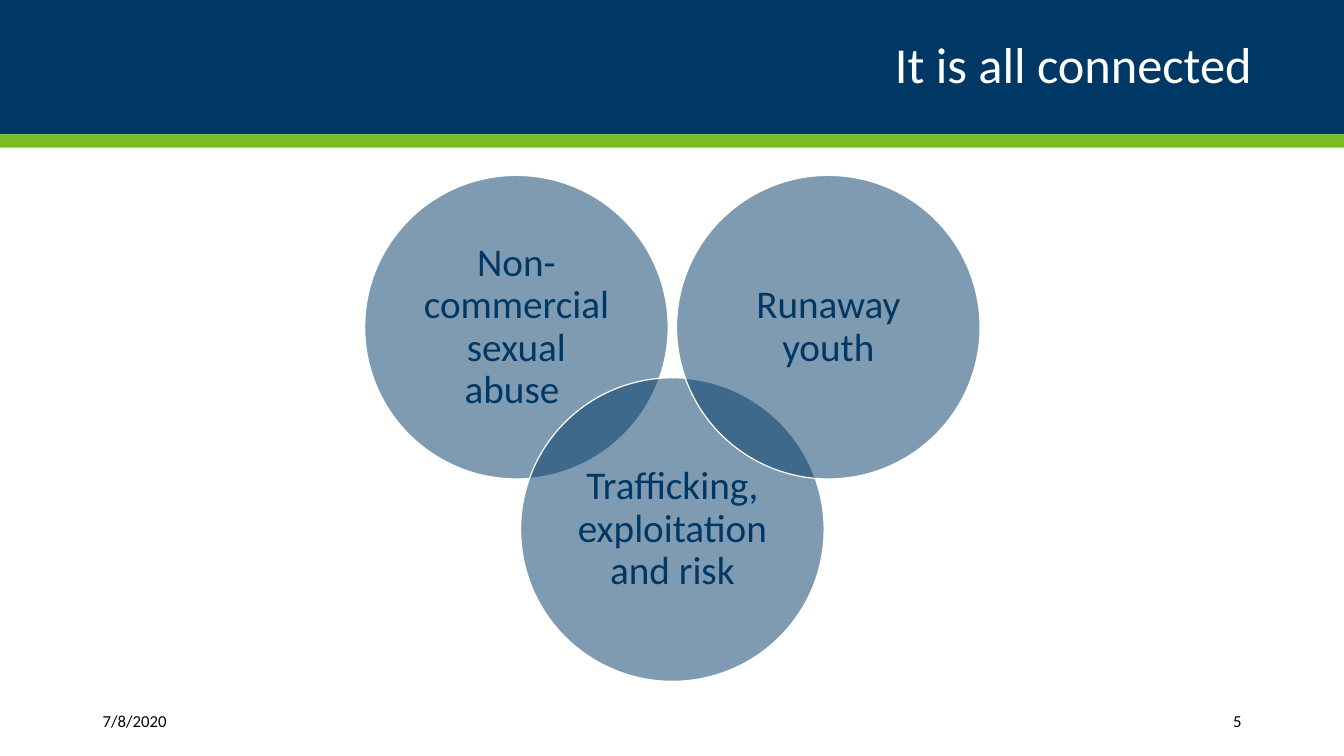
from pptx import Presentation
from pptx import util as u
from pptx.dml.color import RGBColor
from pptx.enum import shapes, text
from pptx.oxml import ns, xmlchemy

NAVY, GREEN, WHITE, BLACK = "003865", "78BE21", "FFFFFF", "000000"
LEFT, MID, RIGHT = text.PP_ALIGN.LEFT, text.PP_ALIGN.CENTER, text.PP_ALIGN.RIGHT


def paint(fmt, color):
    fmt.solid()
    fmt.fore_color.rgb = RGBColor.from_string(color)


def write(frame, words, size=12, color=BLACK, align=LEFT, lead=1.0,
          font="Calibri", pad=(0.25, 0.13)):
    frame.word_wrap = True
    frame.vertical_anchor = text.MSO_ANCHOR.MIDDLE
    frame.margin_left = frame.margin_right = u.Cm(pad[0])
    frame.margin_top = frame.margin_bottom = u.Cm(pad[1])
    para = frame.paragraphs[0]
    para.alignment, para.line_spacing = align, lead
    run = para.add_run()
    run.text = words
    run.font.name, run.font.size = font, u.Pt(size)
    paint(run.font.fill, color)


class Deck:
    def __init__(self, width, height):
        self.show = Presentation()
        self.show.slide_width, self.show.slide_height = u.Cm(width), u.Cm(height)
        self.slide = self.show.slides.add_slide(self.show.slide_layouts[6])

    def shape(self, kind, box, fill):
        item = self.slide.shapes.add_shape(kind, *map(u.Cm, box))
        item.shadow.inherit = False
        paint(item.fill, fill)
        item.line.fill.background()
        return item

    def band(self, box, fill):
        self.shape(shapes.MSO_SHAPE.RECTANGLE, box, fill)

    def label(self, box, words, **style):
        item = self.slide.shapes.add_textbox(*map(u.Cm, box))
        write(item.text_frame, words, **style)

    def circle(self, left, top, size, words):
        item = self.shape(shapes.MSO_SHAPE.OVAL, (left, top, size, size), NAVY)
        paint(item.line.fill, WHITE)
        item.line.width = u.Pt(0.85)
        # Half-transparent fill
        tint = item.fill._xPr.find(ns.qn("a:solidFill"))[0]
        alpha = xmlchemy.OxmlElement("a:alpha")
        alpha.set("val", "50000")
        tint.append(alpha)
        # Label in the square inscribed in the circle
        side = size / 2 ** 0.5
        edge = (size - side) / 2
        self.label((left + edge, top + edge, side, side), words, size=28,
                   color=NAVY, align=MID, lead=0.9, pad=(0.3, 0.3))


def main():
    wide = 33.87
    deck = Deck(wide, 19.05)

    # Header
    deck.band((0, 0, wide, 3.39), NAVY)
    deck.band((0, 3.39, wide, 0.33), GREEN)
    deck.label((2.34, 0, 29.21, 3.39), "It is all connected", size=36,
               color=WHITE, align=RIGHT, lead=0.9, pad=(0, 0.13))

    # Overlapping circles, the middle one lower
    themes = ("Non-commercial sexual abuse ",
              "Trafficking, exploitation and risk", "Runaway youth")
    for i, theme in enumerate(themes):
        deck.circle(9.19 + 3.93 * i, 4.42 + 5.1 * (i % 2), 7.65, theme)

    # Footer
    deck.label((2.34, 17.65, 3.78, 1.02), "7/8/2020")
    deck.label((27.48, 17.65, 4.06, 1.02), "5", align=RIGHT)

    deck.show.save("out.pptx")


if __name__ == "__main__":
    main()
